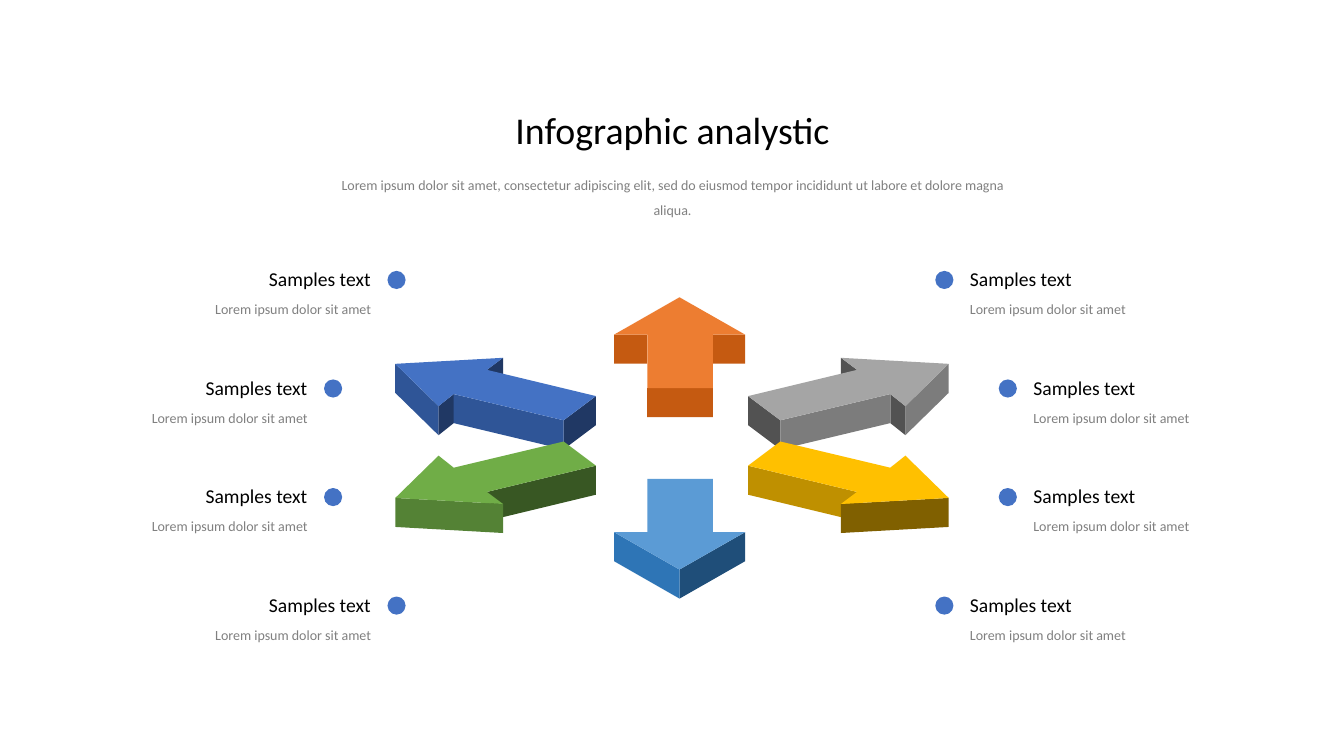
import pptx
import pptx.util
import pptx.dml.color
import pptx.enum.shapes
import pptx.enum.text

ALIGN = pptx.enum.text.PP_ALIGN
SHAPE = pptx.enum.shapes.MSO_SHAPE

# All lengths below are percentages of the slide's width or height
WIDTH, HEIGHT = pptx.util.Inches(13.33), pptx.util.Inches(7.5)
DEPTH = 3.84           # thickness of the arrows
LABEL_MIRROR = 99.77   # left + right position of mirrored labels
ROW_TOP, ROW_STEP = 35.33, 14.36
LABEL_COLUMNS = [72.17, 76.89, 76.89, 72.17]

COLORS = {
    "black": "000000", "text": "808080", "dot": "4472C4",
    "orange": "ED7D31", "orange_mid": "C55A11",
    "gray": "A5A5A5", "gray_mid": "7C7C7C", "gray_dark": "525252",
    "blue": "4472C4", "blue_mid": "2F5597", "blue_dark": "203864",
    "yellow": "FFC000", "yellow_mid": "BF9000", "yellow_dark": "806000",
    "green": "70AD47", "green_mid": "548235", "green_dark": "385723",
    "sky": "5B9BD5", "sky_mid": "2E75B6", "sky_dark": "1F4E79",
}

FORMATS = {
    "title": {"name": "Calibri", "size": pptx.util.Pt(27)},
    "heading": {"name": "Calibri", "size": pptx.util.Pt(14)},
    "body": {"name": "Calibri", "size": pptx.util.Pt(10)},
}

# Faces of the upward arrow and of the one pointing up to the right
UP = [(50.56, 39.33), (55.44, 44.27), (53.04, 44.27), (53.04, 51.33),
      (48.16, 51.33), (48.16, 44.27), (45.69, 44.27)]
SLANTED = [(62.57, 47.33), (70.59, 48.13), (67.37, 53.73), (66.24, 52.13),
           (58.06, 55.6), (55.66, 52.4), (63.77, 48.93)]


def col(share):
    return round(WIDTH * share / 100)


def row(share):
    return round(HEIGHT * share / 100)


def mirror(points, x_sum=None, y_sum=None):
    return [(x if x_sum is None else x_sum - x,
             y if y_sum is None else y_sum - y) for x, y in points]


def paint(sp, color):
    sp.shadow.inherit = False
    sp.fill.solid()
    sp.fill.fore_color.rgb = pptx.dml.color.RGBColor.from_string(COLORS[color])
    sp.line.fill.background()


def add_polygon(shapes, points, color):
    pts = [(col(x), row(y)) for x, y in points]
    builder = shapes.build_freeform(*pts[0], scale=1.0)
    builder.add_line_segments(pts[1:], close=True)
    paint(builder.convert_to_shape(), color)


def add_wall(shapes, start, end, color):
    """Drop an edge of a face straight down by the arrow's depth."""
    (x1, y1), (x2, y2) = start, end
    if y1 == y2:
        sp = shapes.add_shape(SHAPE.RECTANGLE, col(min(x1, x2)), row(y1),
                              col(abs(x2 - x1)), row(DEPTH))
        paint(sp, color)
    else:
        add_polygon(shapes, [start, end, (x2, y2 + DEPTH), (x1, y1 + DEPTH)], color)


def add_arrow(shapes, face, color, walls):
    for i, j, shade in walls:
        add_wall(shapes, face[i], face[j], f"{color}_{shade}")
    add_polygon(shapes, face, color)


def add_text(s, x, y, w, h, text, style, color, align, wrap=False, spacing=None):
    tf = s.shapes.add_textbox(col(x), row(y), col(w), row(h)).text_frame
    frame = {"margin_left": 0, "margin_top": 0, "margin_right": 0,
             "margin_bottom": 0, "word_wrap": wrap,
             "auto_size": pptx.enum.text.MSO_AUTO_SIZE.SHAPE_TO_FIT_TEXT}
    for key, value in frame.items():
        setattr(tf, key, value)
    p = tf.paragraphs[0]
    p.alignment, p.line_spacing = align, spacing
    r = p.add_run()
    r.text = text
    for key, value in FORMATS[style].items():
        setattr(r.font, key, value)
    r.font.color.rgb = pptx.dml.color.RGBColor.from_string(COLORS[color])


def add_label(s, x, y, on_left):
    def place(left, width):
        return LABEL_MIRROR - left - width if on_left else left

    align = ALIGN.RIGHT if on_left else ALIGN.LEFT
    add_text(s, place(x, 16.35), y + 3.33, 16.35, 2.93,
             "Lorem ipsum dolor sit amet", "body", "text", align, True, 1.5)
    add_text(s, place(x, 9.6), y, 9.6, 3.2, "Samples text", "heading", "black", align)
    dot = s.shapes.add_shape(SHAPE.OVAL, col(place(x - 2.58, 1.35)), row(y + 0.5),
                             col(1.35), row(2.4))
    paint(dot, "dot")


def main():
    prs = pptx.Presentation()
    prs.slide_width, prs.slide_height = WIDTH, HEIGHT
    s = prs.slides.add_slide(prs.slide_layouts[6])

    # Six arrows
    arrows = s.shapes.add_group_shape().shapes
    upper_walls = [(6, 0, "dark"), (1, 2, "mid"), (2, 3, "dark"),
                   (4, 5, "dark"), (3, 4, "mid")]
    add_arrow(arrows, UP, "orange", [(1, 2, "mid"), (5, 6, "mid"), (3, 4, "mid")])
    add_arrow(arrows, SLANTED, "gray", upper_walls)
    add_arrow(arrows, mirror(SLANTED, x_sum=100), "blue", upper_walls)
    add_arrow(arrows, mirror(SLANTED, y_sum=114), "yellow",
              [(5, 6, "mid"), (0, 1, "dark")])
    add_arrow(arrows, mirror(SLANTED, x_sum=100, y_sum=114), "green",
              [(5, 6, "dark"), (0, 1, "mid")])
    add_arrow(arrows, mirror(UP, y_sum=114.67), "sky",
              [(0, 1, "dark"), (0, 6, "mid")])

    # Labels on both sides
    for on_left in (False, True):
        for i, x in enumerate(LABEL_COLUMNS):
            add_label(s, x, ROW_TOP + i * ROW_STEP, on_left)

    # Title and introduction
    add_text(s, 35.18, 14.13, 29.71, 6, "Infographic analystic",
             "title", "black", ALIGN.CENTER)
    add_text(s, 24.38, 22.27, 51.31, 6.27,
             "Lorem ipsum dolor sit amet, consectetur adipiscing elit, sed do "
             "eiusmod tempor incididunt ut labore et dolore magna aliqua.",
             "body", "text", ALIGN.CENTER, True, 1.5)

    prs.save("out.pptx")


if __name__ == "__main__":
    main()
